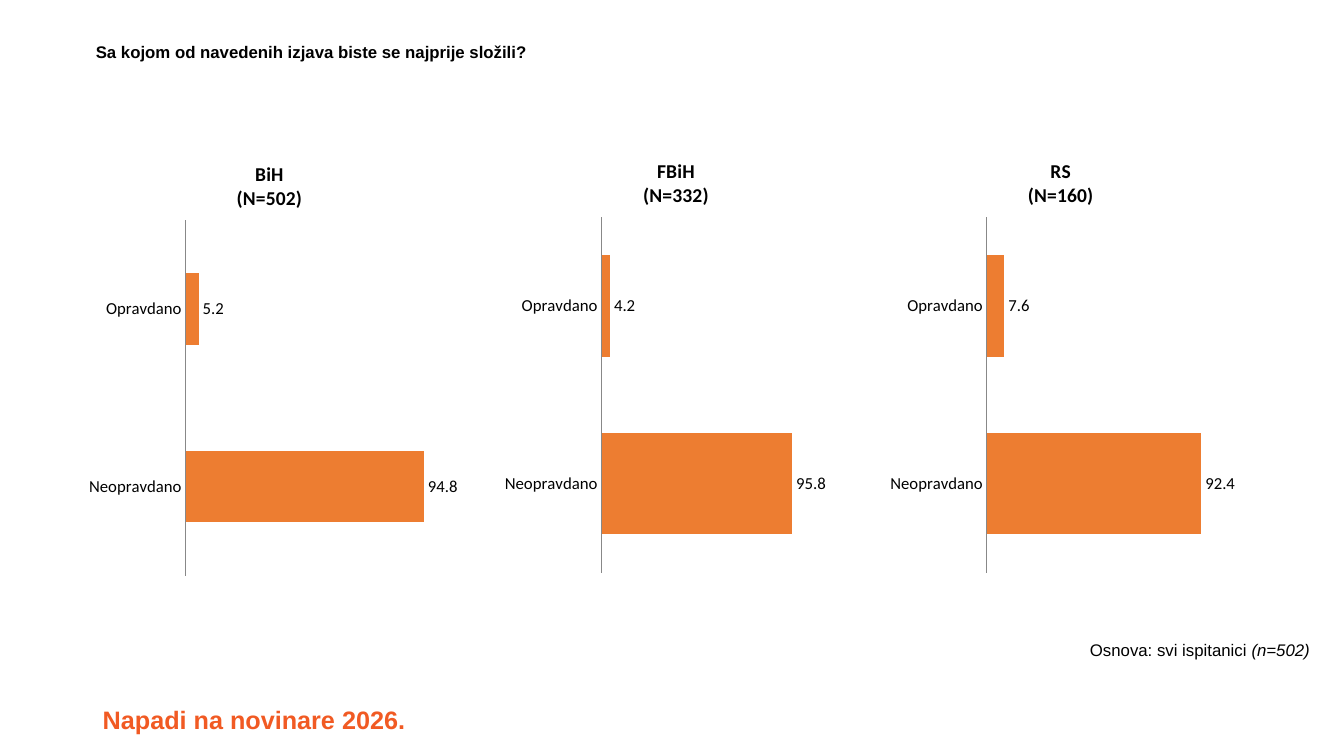
"""Build a slide comparing survey answers in three bar charts."""
from lxml import etree
from pptx import Presentation
from pptx.chart.data import CategoryChartData
from pptx.dml.color import RGBColor
from pptx.enum.chart import XL_CHART_TYPE, XL_LABEL_POSITION, XL_TICK_MARK
from pptx.enum.text import MSO_ANCHOR, PP_ALIGN
from pptx.oxml.ns import qn
from pptx.util import Inches, Pt

BAR = XL_CHART_TYPE.BAR_CLUSTERED
OUT = XL_LABEL_POSITION.OUTSIDE_END
NO_TICK = XL_TICK_MARK.NONE
LEFT, RIGHT = PP_ALIGN.LEFT, PP_ALIGN.RIGHT
TOP = MSO_ANCHOR.TOP

HUES = {"text": "000000", "bar": "ED7D31", "axis": "888888", "brand": "F15A23"}
ASK = "Sa kojom od navedenih izjava biste se najprije složili?"
BASE = ["Osnova: svi ispitanici ", "(n=502)"]
FOOT = "Napadi na novinare 2026."
CATS = ["Neopravdano", "Opravdano"]
CHARTS = [
    {"head": "BiH\n(N=502)", "vals": (94.8, 5.2), "gap": 150,
     "box": (0.85, 1.39, 3.69, 4.41), "plot": (0.27, 0.68), "mid": 0.4},
    {"head": "FBiH\n(N=332)", "vals": (95.8, 4.2), "gap": 75,
     "box": (4.93, 1.36, 3.46, 4.41), "plot": (0.3, 0.57), "mid": 0.41},
    {"head": "RS\n(N=160)", "vals": (92.4, 7.6), "gap": 75,
     "box": (8.79, 1.36, 3.46, 4.41), "plot": (0.29, 0.67), "mid": 0.4},
]
PLOT_TOP, PLOT_TALL, HEAD_TOP = 0.18, 0.8, 0.04


def style(font, size, hue="text", face="Arial", bold=False):
    font.size, font.name, font.bold = Pt(size), face, bold
    font.color.rgb = RGBColor.from_string(HUES[hue])


def fill_box(shape, parts, size, hue="text", bold=False, align=LEFT):
    frame = shape.text_frame
    frame.word_wrap = True
    frame.vertical_anchor = TOP
    para = frame.paragraphs[0]
    para.alignment = align
    for part in parts:
        run = para.add_run()
        run.text = part
        style(run.font, size, hue, bold=bold)
    return para.runs


def place(owner, index, **spots):
    for old in owner.findall(qn("c:layout")):
        owner.remove(old)
    layout = etree.Element(qn("c:layout"))
    manual = etree.SubElement(layout, qn("c:manualLayout"))
    if "w" in spots:
        etree.SubElement(manual, qn("c:layoutTarget")).set("val", "inner")
    for axis in "xy":
        etree.SubElement(manual, qn(f"c:{axis}Mode")).set("val", "edge")
    for name, share in spots.items():
        etree.SubElement(manual, qn(f"c:{name}")).set("val", str(share))
    owner.insert(index, layout)


def add_bars(slide, item):
    data = CategoryChartData()
    data.categories = CATS
    data.add_series("Series 1", item["vals"])
    box = [Inches(n) for n in item["box"]]
    chart = slide.shapes.add_chart(BAR, *box, data).chart
    style(chart.font, 12, face="Calibri")
    chart.has_legend = False
    chart.has_title = True
    title = chart.chart_title
    title.text_frame.text = item["head"]
    for para in title.text_frame.paragraphs:
        for run in para.runs:
            style(run.font, 14, face="Calibri", bold=True)
    place(title._element, 1, x=item["mid"], y=HEAD_TOP)
    x, w = item["plot"]
    area = chart._chartSpace.find(".//" + qn("c:plotArea"))
    place(area, 0, x=x, y=PLOT_TOP, w=w, h=PLOT_TALL)

    plot = chart.plots[0]
    plot.gap_width, plot.overlap = item["gap"], -25
    plot.vary_by_categories = False
    fill = plot.series[0].format.fill
    fill.solid()
    fill.fore_color.rgb = RGBColor.from_string(HUES["bar"])
    plot.has_data_labels = True
    labels = plot.data_labels
    labels.show_value, labels.position = True, OUT
    labels.number_format, labels.number_format_is_linked = "0.0", False
    style(labels.font, 12, face="Calibri")

    cats, vals = chart.category_axis, chart.value_axis
    cats.major_tick_mark = cats.minor_tick_mark = NO_TICK
    style(cats.tick_labels.font, 12, face="Calibri")
    cats.format.line.width = Pt(0.75)
    cats.format.line.color.rgb = RGBColor.from_string(HUES["axis"])
    vals.minimum_scale, vals.maximum_scale = 0, 100
    vals.has_major_gridlines = vals.visible = False


def main():
    deck = Presentation()
    deck.slide_width, deck.slide_height = Inches(13.33), Inches(7.5)
    slide = deck.slides.add_slide(deck.slide_layouts[5])
    title = slide.shapes.title
    title.left, title.top = Inches(0.85), Inches(0.36)
    title.width, title.height = Inches(12.48), Inches(0.3)
    fill_box(title, [ASK], 12, bold=True)
    foot = slide.shapes.add_textbox(
        Inches(0.92), Inches(6.94), Inches(9.52), Inches(0.4))
    fill_box(foot, [FOOT], 18, "brand", bold=True)
    base = slide.shapes.add_textbox(
        Inches(0.92), Inches(6.3), Inches(12.17), Inches(0.5))
    fill_box(base, BASE, 12, align=RIGHT)[1].font.italic = True
    for item in CHARTS:
        add_bars(slide, item)
    deck.save("out.pptx")


if __name__ == "__main__":
    main()
